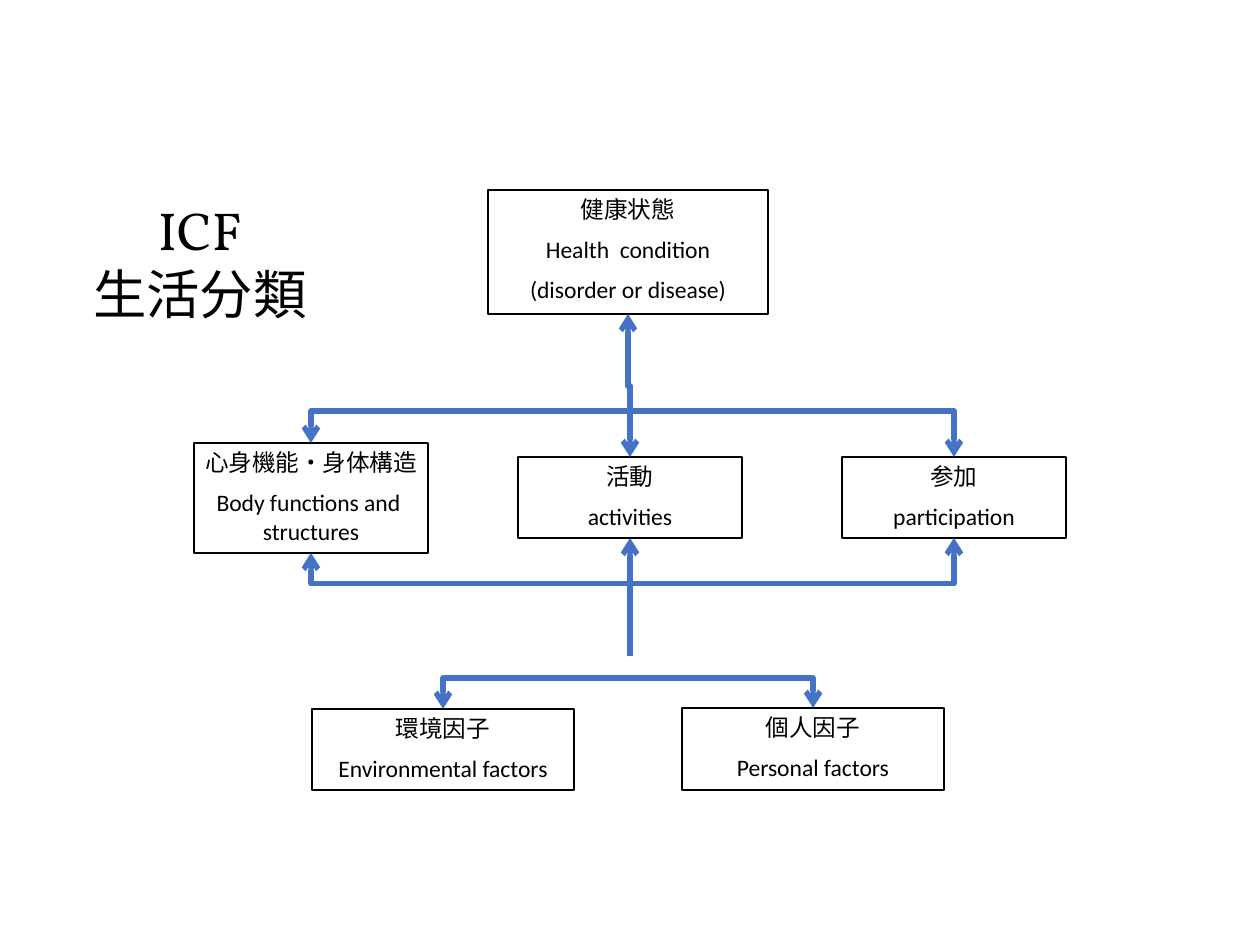
from lxml import etree
from pptx import Presentation
from pptx.dml.color import RGBColor
from pptx.enum.shapes import MSO_CONNECTOR, MSO_SHAPE
from pptx.enum.text import MSO_ANCHOR, MSO_AUTO_SIZE, PP_ALIGN
from pptx.oxml.ns import qn
from pptx.util import Pt

ELBOW, STRAIGHT = MSO_CONNECTOR.ELBOW, MSO_CONNECTOR.STRAIGHT
RECT = MSO_SHAPE.RECTANGLE
CENTER, MIDDLE, TOP = PP_ALIGN.CENTER, MSO_ANCHOR.MIDDLE, MSO_ANCHOR.TOP
GROW = MSO_AUTO_SIZE.SHAPE_TO_FIT_TEXT
BOTTOM_SITE = 2
COLORS = {"ink": "000000", "paper": "FFFFFF", "link": "4472C4"}
CJK = "Noto Sans CJK JP"


def px(n):
    """Turn px into EMU."""
    return round(n * 914400 / 126)


def color(name):
    """Look up a colour by name."""
    return RGBColor.from_string(COLORS[name])


def write(frame, lines, fonts, size, gap=0):
    """Fill a text frame with centred lines."""
    frame.word_wrap = True
    frame.margin_left = frame.margin_right = px(9)
    frame.margin_top = frame.margin_bottom = px(5)
    frame.text = "\n".join(lines)
    for i, (para, face) in enumerate(zip(frame.paragraphs, fonts)):
        para.alignment = CENTER
        para.space_before = Pt(gap if i else 0)
        for run in para.runs:
            run.font.size = Pt(size)
            run.font.name = face
            run.font.color.rgb = color("ink")
            etree.SubElement(run.font._element, qn("a:ea"), typeface=face)


def title(slide, box):
    """Place the heading."""
    frame = slide.shapes.add_textbox(*map(px, box)).text_frame
    frame.vertical_anchor = MIDDLE
    write(frame, ["ICF", "生活分類"], ["Vollkorn", CJK], 30.5)


def card(slide, box, lines):
    """Place one framed factor with its Japanese and English names."""
    shape = slide.shapes.add_shape(RECT, *map(px, box))
    shape.shadow.inherit = False
    shape.fill.solid()
    shape.fill.fore_color.rgb = color("paper")
    shape.line.color.rgb = color("ink")
    shape.line.width = Pt(1.25)
    frame = shape.text_frame
    frame.vertical_anchor = TOP
    write(frame, lines, [CJK] + ["Calibri"] * (len(lines) - 1), 13.5, 6.75)
    frame.auto_size = GROW
    return shape


def link(slide, kind, start, end, tips):
    """Draw a blue connector with arrowheads at the given tips."""
    wire = slide.shapes.add_connector(kind, *map(px, start + end))
    wire.line.color.rgb = color("link")
    wire.line.width = Pt(3)
    for tip in tips:
        etree.SubElement(wire.line._get_or_add_ln(), qn("a:" + tip), type="arrow")
    etree.SubElement(wire._element.spPr, qn("a:effectLst"))
    return wire


def bend(slide, start, end, via):
    """Draw a two-headed elbow whose crossbar lies at height via."""
    wire = link(slide, ELBOW, start, end, ["headEnd", "tailEnd"])
    (x1, y1), (x2, y2) = start, end
    wide, high = abs(y2 - y1), abs(x2 - x1)
    wire.left, wire.top = px((x1 + x2 - wide) / 2), px((y1 + y2 - high) / 2)
    wire.width, wire.height = px(wide), px(high)
    down = y2 > y1
    frame = wire._element.spPr.find(qn("a:xfrm"))
    frame.set("rot", str((270 if down else 90) * 60000))
    frame.set("flipH", "1")
    frame.set("flipV", "0" if down else "1")
    shape = wire._element.spPr.find(qn("a:prstGeom"))
    guides = shape.find(qn("a:avLst"))
    if guides is None:
        guides = etree.SubElement(shape, qn("a:avLst"))
    ratio = round((via - y1) / (y2 - y1) * 100000)
    etree.SubElement(guides, qn("a:gd"), name="adj1", fmla=f"val {ratio}")


def model(slide, box):
    """Place the factors and the links between them."""
    left, top, wide, high = box

    def at(x, y):
        return left + x, top + y

    def put(x, y, w, h, *lines):
        return card(slide, at(x, y) + (w, h), lines)

    put(294, 0, 280, 124, "健康状態", "Health  condition", "(disorder or disease)")
    put(0, 253, 234, 110, "心身機能・身体構造", "Body functions and  structures")
    act = put(324, 267, 224, 81, "活動", "activities")
    put(648, 267, 224, 81, "参加", "participation")
    put(118, 519, 262, 81, "環境因子", "Environmental factors")
    put(488, 518, 262, 82, "個人因子", "Personal factors")

    bends = [
        (434, 124, 436, 267, 196),
        (117, 253, 760, 267, 221),
        (117, 363, 760, 348, 394),
        (249, 519, 619, 518, 488),
    ]
    for x1, y1, x2, y2, via in bends:
        bend(slide, at(x1, y1), at(x2, y2), top + via)
    stem = link(slide, STRAIGHT, at(436, 466), at(436, 348), ["tailEnd"])
    stem.end_connect(act, BOTTOM_SITE)


def main():
    """Build the slide."""
    deck = Presentation()
    deck.slide_width, deck.slide_height = px(1260), px(945)
    slide = deck.slides.add_slide(deck.slide_layouts[6])
    model(slide, (194, 190, 872, 600))
    title(slide, (50, 202, 300, 118))
    deck.save("out.pptx")


if __name__ == "__main__":
    main()
